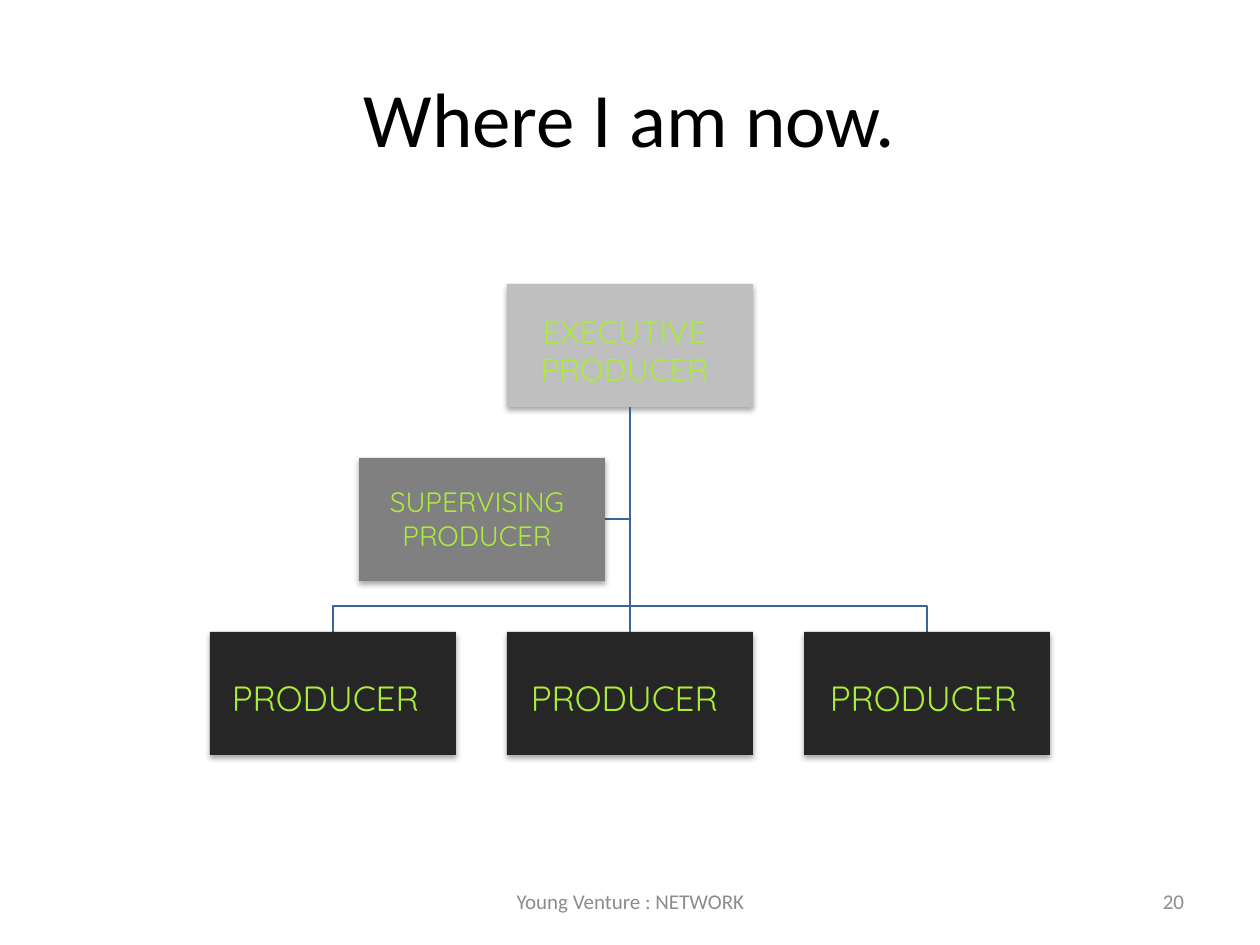
"""Build an organisation chart slide of producer roles."""
from lxml.etree import SubElement
from pptx import Presentation
from pptx.dml.color import RGBColor
from pptx.enum.shapes import MSO_CONNECTOR, MSO_SHAPE
from pptx.enum.text import MSO_ANCHOR, PP_ALIGN
from pptx.oxml import parse_xml
from pptx.oxml.ns import nsdecls, qn
from pptx.util import Pt

PX = 914400 / 126
SHADOW = (
    f'<a:effectLst {nsdecls("a")}>'
    '<a:outerShdw blurRad="40000" dist="23000" dir="5400000" rotWithShape="0">'
    '<a:srgbClr val="000000"><a:alpha val="35000"/></a:srgbClr>'
    '</a:outerShdw></a:effectLst>'
)


def scale(*sizes):
    return [round(size * PX) for size in sizes]


def color(target, value):
    target.rgb = RGBColor.from_string(value)


deck = Presentation()
deck.slide_width, deck.slide_height = scale(1260, 945)
slide = deck.slides.add_slide(deck.slide_layouts[5])
shapes = slide.shapes

title = shapes.title
title.left, title.top, title.width, title.height = scale(63, 38, 1134, 157)
title.text_frame.text = "Where I am now."
font = title.text_frame.paragraphs[0].runs[0].font
font.name, font.size = "Calibri", Pt(44)
color(font.color, "000000")

MID, BASE, BEND, ROW, STEP = 630, 407, 606, 632, 297
branches = [[(MID, BASE), (MID, 519), (604, 519)]]
for end in (MID - STEP, MID + STEP):
    branches.append([(MID, BASE), (MID, BEND), (end, BEND), (end, ROW)])
for points in branches:
    start, *rest = [scale(*point) for point in points]
    pen = shapes.build_freeform(*start)
    pen.add_line_segments(rest, close=False)
    branch = pen.convert_to_shape()
    branch.fill.background()
    branch.shadow.inherit = False
    color(branch.line.color, "3B6596")
    branch.line.width = Pt(0.75)

boxes = []
for left, top, fill in [
    (507, 284, "BFBFBF"),
    (359, 458, "808080"),
    *[(507 + step, ROW, "262626") for step in (-STEP, 0, STEP)],
]:
    box = shapes.add_shape(MSO_SHAPE.RECTANGLE, *scale(left, top, 246, 123))
    box.fill.solid()
    color(box.fill.fore_color, fill)
    box.line.fill.background()
    box._element.spPr.append(parse_xml(SHADOW))
    boxes.append(box)

trunk = shapes.add_connector(MSO_CONNECTOR.STRAIGHT, *scale(MID, BASE, MID, ROW))
trunk.begin_connect(boxes[0], 2)
trunk.end_connect(boxes[3], 0)
color(trunk.line.color, "3B6596")
trunk.line.width = Pt(0.75)
SubElement(trunk._element.spPr, qn("a:effectLst"))

ROLE = ("Quicksand", "AAEC39", PP_ALIGN.CENTER, (6, 6, 13, 6))
FOOT = ("Calibri", "8C8C8C", PP_ALIGN.CENTER, (13, 6, 13, 6))
PAGE = ("Calibri", "8C8C8C", PP_ALIGN.RIGHT, (13, 6, 13, 6))
labels = [
    ("Young Venture : NETWORK", (431, 876, 399, 50), 12, FOOT),
    ("20", (903, 876, 294, 50), 12, PAGE),
    ("EXECUTIVE PRODUCER", (494, 291, 268, 118), 18, ROLE),
    ("SUPERVISING PRODUCER", (333, 459, 295, 118), 16, ROLE),
]
for left in range(195, 794, 299):
    labels.append(("PRODUCER", (left, 638, 268, 118), 20, ROLE))
for text, place, size, (face, ink, align, inset) in labels:
    frame = shapes.add_textbox(*scale(*place)).text_frame
    frame.word_wrap = True
    frame.vertical_anchor = MSO_ANCHOR.MIDDLE
    (frame.margin_left, frame.margin_top,
     frame.margin_right, frame.margin_bottom) = scale(*inset)
    frame.text = text
    line = frame.paragraphs[0]
    line.alignment = align
    font = line.runs[0].font
    font.name, font.size = face, Pt(size)
    color(font.color, ink)

deck.save("out.pptx")
